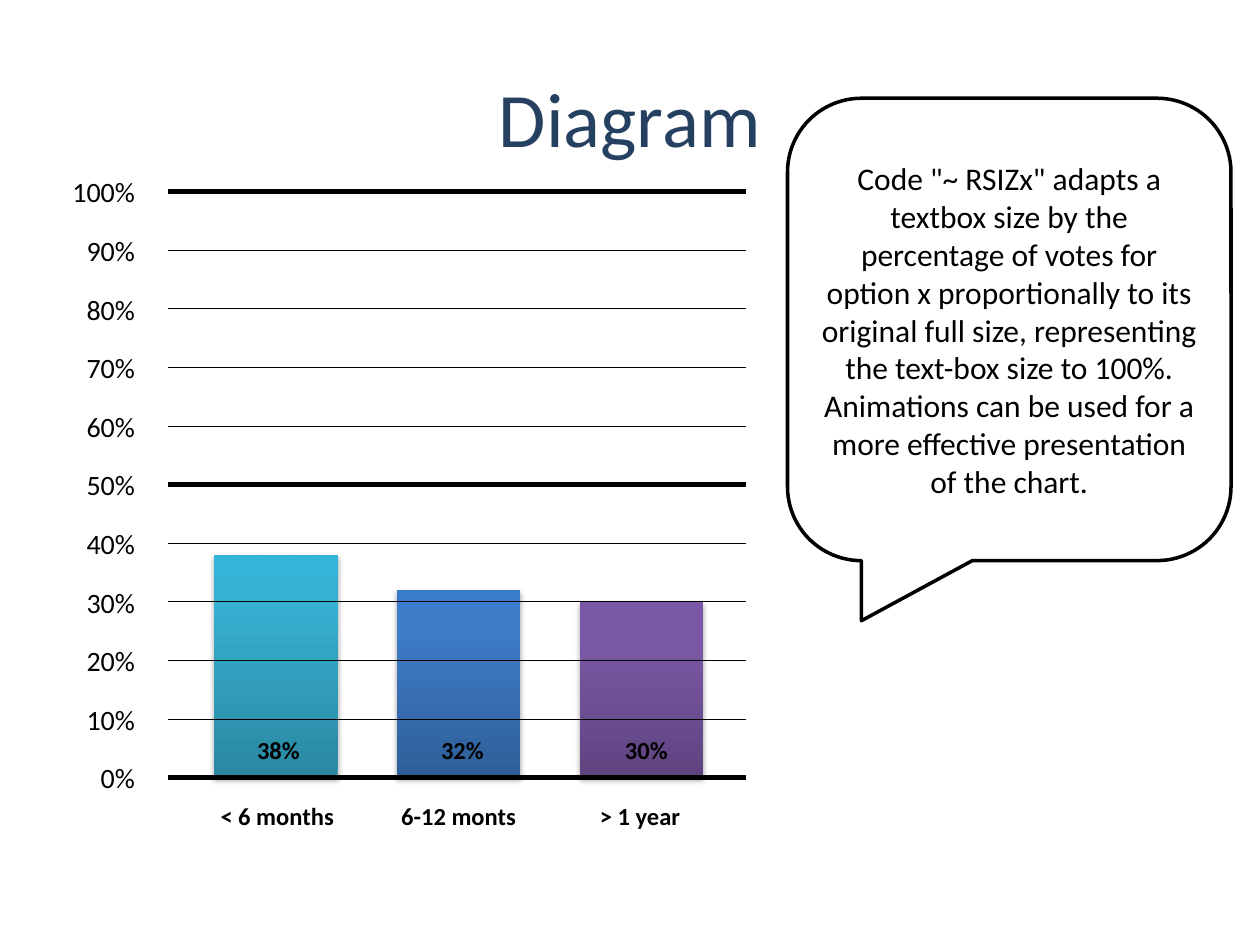
"""Builds a slide with a bar diagram of vote percentages and an explanatory callout."""
from copy import deepcopy
from dataclasses import dataclass

from lxml import etree
from pptx import Presentation
from pptx import util as u
from pptx.dml.color import RGBColor
from pptx.enum import shapes, text
from pptx.oxml.ns import qn


@dataclass(frozen=True)
class Theme:
    font: str = "Calibri"
    title: str = "254061"
    ink: str = "000000"
    paper: str = "FFFFFF"
    teal: tuple = ("2A88A2", "37B1D2", "34B4D6")
    blue: tuple = ("2F5F99", "3D7CC7", "3A7CCB")
    purple: tuple = ("5F4480", "7B58A6", "7C57A8")
    title_size: int = 44
    note_size: int = 18
    axis_size: int = 16
    label_size: int = 14
    heavy: float = 3
    thin: float = 0.25
    outline: float = 2


THEME = Theme()
LEFT, RIGHT, TOP, BASE = 1.33, 5.92, 1.52, 6.17
BAR_LEFT, BAR_WIDTH, BAR_STEP = 1.7, 0.98, 1.45
NAME_LEFT, NAME_STEP = 1.54, 1.44
VALUE_LEFT, VALUE_STEP = 1.55, 1.46
BARS = [
    ("< 6 months", 38, THEME.teal),
    ("6-12 monts", 32, THEME.blue),
    ("> 1 year", 30, THEME.purple),
]
NOTE = (
    'Code "~ RSIZx" adapts a textbox size by the percentage of votes for option x '
    "proportionally to its original full size, representing the text-box size to 100%. "
    "Animations can be used for a more effective presentation of the chart."
)


def rgb(value):
    return RGBColor.from_string(value)


def inches(*values):
    return [u.Inches(v) for v in values]


def level(percent):
    return BASE - (BASE - TOP) * percent / 100


def write(tf, words, size, color=THEME.ink, bold=False, align=text.PP_ALIGN.CENTER,
          anchor=text.MSO_ANCHOR.TOP, margins=None):
    tf.word_wrap = True
    tf.vertical_anchor = anchor
    if margins is not None:
        tf.margin_left, tf.margin_top, tf.margin_right, tf.margin_bottom = inches(*margins)
    p = tf.paragraphs[0]
    p.alignment = align
    r = p.add_run()
    r.text = words
    r.font.name, r.font.size, r.font.bold = THEME.font, u.Pt(size), bold
    r.font.color.rgb = rgb(color)


class Deck:
    def __init__(self, prs, theme):
        self.theme = theme
        self.s = prs.slides.add_slide(prs.slide_layouts[5])

    def title(self, words, *box):
        sp = self.s.shapes.title
        sp.left, sp.top, sp.width, sp.height = inches(*box)
        write(sp.text_frame, words, self.theme.title_size, color=self.theme.title,
              anchor=text.MSO_ANCHOR.MIDDLE)

    def label(self, words, *box, **style):
        sp = self.s.shapes.add_textbox(*inches(*box))
        write(sp.text_frame, words, **style)

    def bar(self, colors, *box):
        sp = self.s.shapes.add_shape(shapes.MSO_SHAPE.RECTANGLE, *inches(*box))
        sp.line.fill.background()
        sp.fill.gradient()
        sp.fill.gradient_angle = 90
        spPr = sp._element.spPr
        stops = spPr.find(".//" + qn("a:gsLst"))
        stops.append(deepcopy(stops[0]))
        for stop, position, color in zip(sp.fill.gradient_stops, (0, 0.8, 1), colors):
            stop.position = position
            stop.color.rgb = rgb(color)
        sp.shadow.inherit = False
        shadow = etree.SubElement(
            spPr.find(qn("a:effectLst")), qn("a:outerShdw"), blurRad=str(u.Pt(3.1)),
            dist=str(u.Pt(1.8)), dir="5400000", rotWithShape="0")
        color = etree.SubElement(shadow, qn("a:srgbClr"), val=self.theme.ink)
        etree.SubElement(color, qn("a:alpha"), val="35000")

    def rule(self, y, weight):
        line = self.s.shapes.add_connector(
            shapes.MSO_CONNECTOR.STRAIGHT, *inches(LEFT, y, RIGHT, y))
        line.line.color.rgb = rgb(self.theme.ink)
        line.line.width = u.Pt(weight)
        etree.SubElement(line._element.spPr, qn("a:effectLst"))

    def callout(self, words, *box):
        sp = self.s.shapes.add_shape(
            shapes.MSO_SHAPE.ROUNDED_RECTANGULAR_CALLOUT, *inches(*box))
        for i, value in enumerate((-1 / 3, 0.63, 1 / 6)):
            sp.adjustments[i] = value
        sp.shadow.inherit = False
        sp.fill.solid()
        sp.fill.fore_color.rgb = rgb(self.theme.paper)
        sp.line.color.rgb = rgb(self.theme.ink)
        sp.line.width = u.Pt(self.theme.outline)
        write(sp.text_frame, words, self.theme.note_size, anchor=text.MSO_ANCHOR.MIDDLE,
              margins=(0.09, 0.05, 0.09, 0.05))


def main():
    prs = Presentation()
    prs.slide_width, prs.slide_height = inches(10, 7.5)
    deck = Deck(prs, THEME)
    deck.title("Diagram", 0.5, 0.3, 9, 1.25)

    for i, (_, percent, colors) in enumerate(BARS):
        y = level(percent)
        deck.bar(colors, BAR_LEFT + i * BAR_STEP, y, BAR_WIDTH, BASE - y)

    for percent in range(0, 101, 10):
        y = level(percent)
        deck.rule(y, THEME.thin if percent % 50 else THEME.heavy)
        deck.label(f"{percent}%", 0.47, y - 0.18, 0.77, 0.37, size=THEME.axis_size,
                   align=text.PP_ALIGN.RIGHT, margins=(0, 0.05, 0.17, 0.05))

    style = dict(size=THEME.label_size, bold=True, margins=(0, 0, 0, 0))
    for i, (name, percent, _) in enumerate(BARS):
        deck.label(name, NAME_LEFT + i * NAME_STEP, 6.36, 1.32, 0.68, **style)
        deck.label(f"{percent}%", VALUE_LEFT + i * VALUE_STEP, 5.83, 1.32, 0.39, **style)

    deck.callout(NOTE, 6.25, 0.78, 3.52, 3.67)
    prs.save("out.pptx")


if __name__ == "__main__":
    main()
